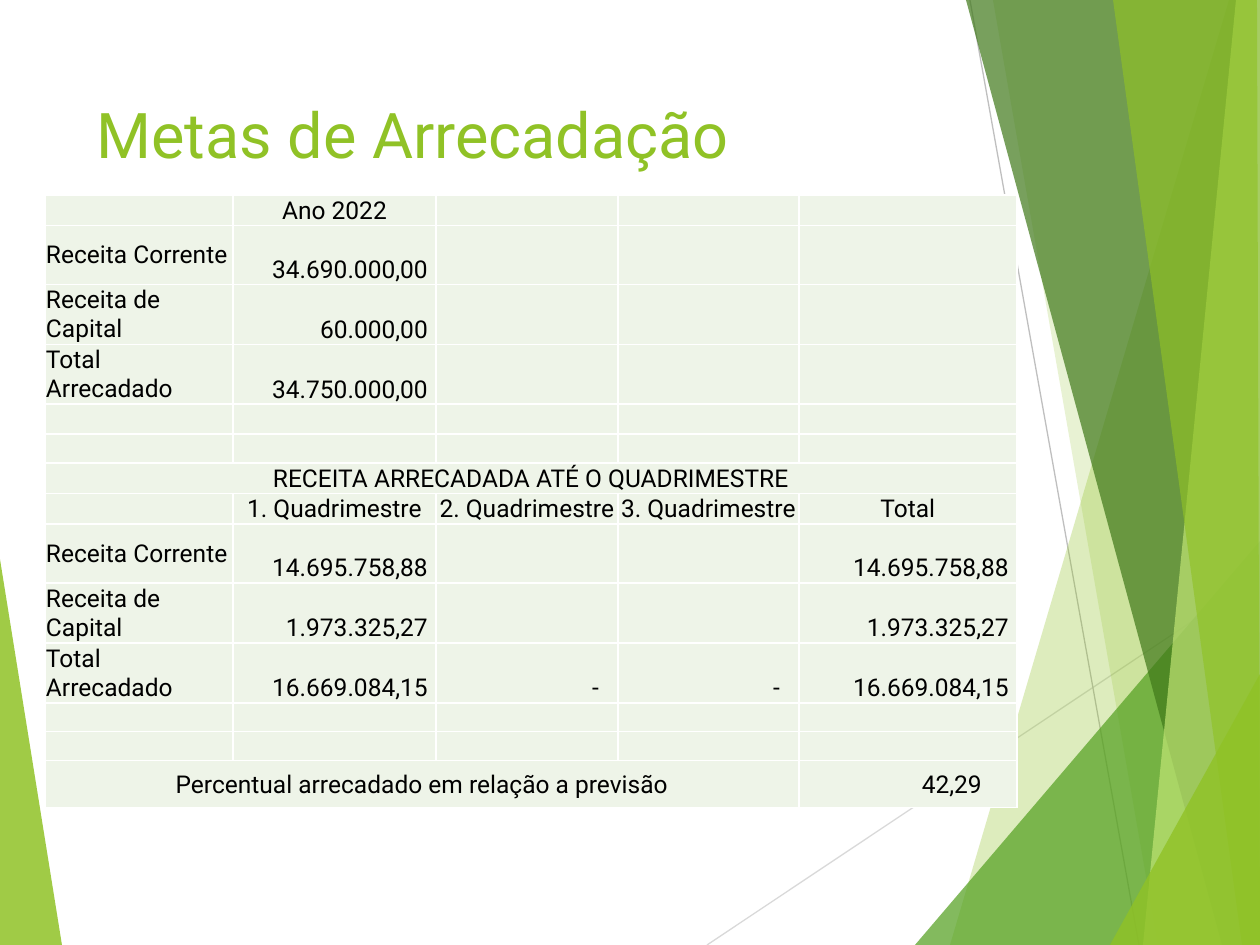
from lxml import etree
from pptx import Presentation
from pptx.dml.color import RGBColor
from pptx.enum.shapes import MSO_CONNECTOR
from pptx.enum.text import MSO_ANCHOR, PP_ALIGN
from pptx.oxml.ns import qn
from pptx.util import Emu, Pt

SCALE = 914400 / 126
WIDTH, HEIGHT = 1260, 945
FONT = "Roboto"
STRAIGHT = MSO_CONNECTOR.STRAIGHT
TOP, MIDDLE, BOTTOM = MSO_ANCHOR.TOP, MSO_ANCHOR.MIDDLE, MSO_ANCHOR.BOTTOM
LEFT, CENTER, RIGHT = PP_ALIGN.LEFT, PP_ALIGN.CENTER, PP_ALIGN.RIGHT

GREEN, BLACK, WHITE, CELL_FILL = "90C226", "000000", "FFFFFF", "EEF4E8"

LEFT_WEDGE = ([(0, 559), (62, 945), (0, 945)], GREEN, 85)
RIGHT_FACETS = [
    ([(279, 0), (0, 945), (310, 945), (310, 0)], GREEN, 30),
    ([(43, 0), (208, 945), (310, 945), (310, 0)], GREEN, 20),
    ([(-35, 945), (310, 541), (310, 945)], "54A021", 72),
    ([(16, 0), (272, 945), (310, 945), (310, 0)], "3F7819", 70),
    ([(286, 0), (193, 945), (310, 945), (310, 0)], "C0E474", 70),
    ([(163, 0), (292, 945), (310, 945), (307, 0)], GREEN, 65),
    ([(160, 945), (310, 674), (310, 945)], GREEN, 80),
]
THIN_LINES = [((707, 945), (1260, 576), "D9D9D9"), ((970, 0), (1139, 945), "BFBFBF")]

COLUMN_WIDTHS = [188, 203, 182, 181, 218]
SHORT, TALL, LAST = 30, 59, 47
ROW_HEIGHTS = [SHORT, TALL, TALL, TALL, SHORT, 29, SHORT,
               SHORT, TALL, TALL, TALL, 29, 29, LAST]
STYLES = {
    "heading": (CENTER, BOTTOM, 1),
    "label": (LEFT, MIDDLE, 1),
    "value": (RIGHT, BOTTOM, 8),
    "dash": (RIGHT, BOTTOM, 19),
    "caption": (CENTER, MIDDLE, 1),
    "percent": (RIGHT, MIDDLE, 35),
}
LABELS = ["Receita Corrente", "Receita de Capital", "Total Arrecadado"]
FORECAST = ["34.690.000,00", "60.000,00", "34.750.000,00"]
COLLECTED = ["14.695.758,88", "1.973.325,27", "16.669.084,15"]
QUARTER_HEADINGS = ["1. Quadrimestre", "2. Quadrimestre", "3. Quadrimestre", "Total"]
MERGES = [(6, 4), (13, 3)]


def px(length):
    return Emu(round(length * SCALE))


def color(hex_string):
    return RGBColor.from_string(hex_string)


def add_text(paragraph, text, size, hex_string):
    run = paragraph.add_run()
    run.text = text
    run.font.size = Pt(size)
    run.font.name = FONT
    run.font.color.rgb = color(hex_string)


def add_facet(slide, left, top, points, hex_string, opacity):
    corners = [(left + x, top + y) for x, y in points]
    builder = slide.shapes.build_freeform(*corners[0], scale=SCALE)
    builder.add_line_segments(corners[1:], close=True)
    shape = builder.convert_to_shape()
    shape.shadow.inherit = False
    shape.line.fill.background()
    shape.fill.solid()
    shape.fill.fore_color.rgb = color(hex_string)
    fill_color = shape.fill._xPr.find(qn("a:solidFill"))[0]
    etree.SubElement(fill_color, qn("a:alpha"), val=str(opacity * 1000))


def add_thin_line(slide, start, end, hex_string):
    connector = slide.shapes.add_connector(STRAIGHT, *map(px, start + end))
    connector.line.color.rgb = color(hex_string)
    connector.line.width = Pt(0.75)
    etree.SubElement(connector._element.spPr, qn("a:effectLst"))


def add_background(slide, facets_left):
    add_facet(slide, 0, 0, *LEFT_WEDGE)
    for thin_line in THIN_LINES:
        add_thin_line(slide, *thin_line)
    for facet in RIGHT_FACETS:
        add_facet(slide, facets_left, 0, *facet)


def add_title(slide, left, top, width, height):
    frame = slide.shapes.add_textbox(*map(px, (left, top, width, height))).text_frame
    frame.word_wrap = True
    frame.vertical_anchor = TOP
    frame.margin_top = px(12)
    add_text(frame.paragraphs[0], "Metas de Arrecadação", 36, GREEN)


def revenue_entries():
    entries = {
        (0, 1): ("Ano 2022", "heading"),
        (6, 0): ("RECEITA ARRECADADA ATÉ O QUADRIMESTRE", "heading"),
        (10, 2): ("-", "dash"),
        (10, 3): ("-", "dash"),
        (13, 0): ("Percentual arrecadado em relação a previsão", "caption"),
        (13, 4): ("42,29", "percent"),
    }
    for column, heading in enumerate(QUARTER_HEADINGS, 1):
        entries[7, column] = (heading, "heading")
    for first_row, values, columns in ((1, FORECAST, [1]), (8, COLLECTED, [1, 4])):
        for row, (label, value) in enumerate(zip(LABELS, values), first_row):
            entries[row, 0] = (label, "label")
            for column in columns:
                entries[row, column] = (value, "value")
    return entries


def format_cell(cell):
    properties = cell._tc.get_or_add_tcPr()
    for side in ("lnL", "lnR", "lnT", "lnB"):
        border = etree.SubElement(properties, qn(f"a:{side}"), w=str(Pt(1)))
        fill = etree.SubElement(border, qn("a:solidFill"))
        etree.SubElement(fill, qn("a:srgbClr"), val=WHITE)
    cell.fill.solid()
    cell.fill.fore_color.rgb = color(CELL_FILL)
    cell.margin_left = cell.margin_right = cell.margin_top = px(1)
    cell.margin_bottom = 0


def fill_cell(cell, text, style):
    alignment, anchor, right_margin = STYLES[style]
    cell.vertical_anchor = anchor
    cell.margin_right = px(right_margin)
    paragraph = cell.text_frame.paragraphs[0]
    paragraph.alignment = alignment
    add_text(paragraph, text, 14, BLACK)


def add_revenue_table(slide, left, top):
    size = sum(COLUMN_WIDTHS), sum(ROW_HEIGHTS)
    frame = slide.shapes.add_table(len(ROW_HEIGHTS), len(COLUMN_WIDTHS),
                                   *map(px, (left, top, *size)))
    table = frame.table
    table.first_row = table.horz_banding = False
    for column, width in zip(table.columns, COLUMN_WIDTHS):
        column.width = px(width)
    for row, height in zip(table.rows, ROW_HEIGHTS):
        row.height = px(height)
    entries = revenue_entries()
    for row in range(len(ROW_HEIGHTS)):
        for column in range(len(COLUMN_WIDTHS)):
            cell = table.cell(row, column)
            format_cell(cell)
            if (row, column) in entries:
                fill_cell(cell, *entries[row, column])
            else:
                paragraph = cell.text_frame.paragraphs[0]
                etree.SubElement(paragraph._p, qn("a:endParaRPr"), sz="1200")
    for row, last_column in MERGES:
        table.cell(row, 0).merge(table.cell(row, last_column))


def main():
    presentation = Presentation()
    presentation.slide_width, presentation.slide_height = px(WIDTH), px(HEIGHT)
    slide = presentation.slides.add_slide(presentation.slide_layouts[6])
    add_background(slide, 950)
    add_title(slide, 84, 84, 874, 111)
    add_revenue_table(slide, 45, 195)
    presentation.save("out.pptx")


if __name__ == "__main__":
    main()
